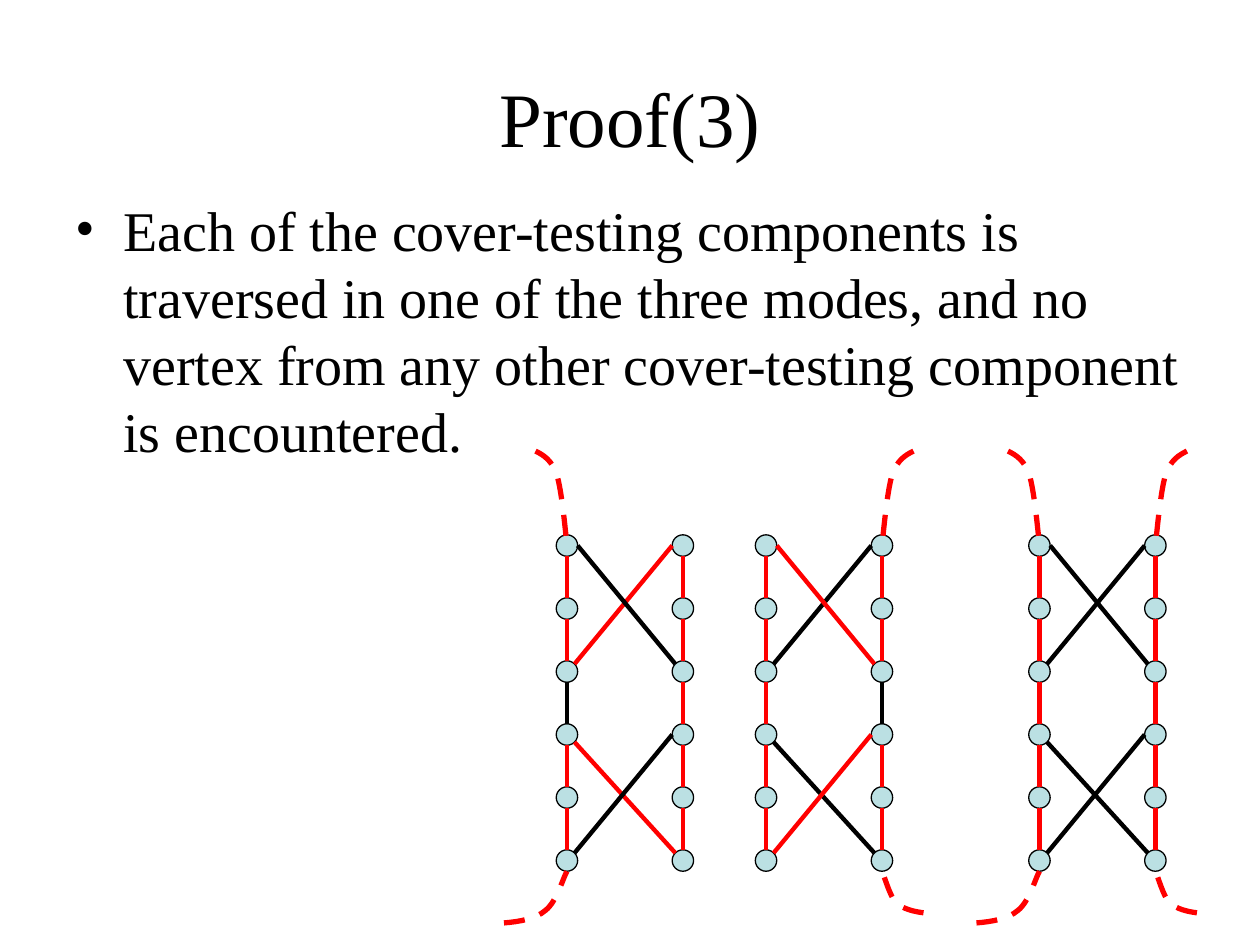
from dataclasses import dataclass

from lxml.etree import SubElement
from pptx import Presentation
from pptx.dml.color import RGBColor
from pptx.enum.dml import MSO_LINE
from pptx.enum.shapes import MSO_CONNECTOR, MSO_SHAPE
from pptx.enum.text import MSO_ANCHOR, PP_ALIGN
from pptx.oxml.ns import qn
from pptx.util import Inches, Pt


@dataclass(frozen=True)
class Theme:
    font: str = "Times New Roman"
    black: RGBColor = RGBColor(0x00, 0x00, 0x00)
    red: RGBColor = RGBColor(0xFF, 0x00, 0x00)
    node: RGBColor = RGBColor(0xBB, 0xE0, 0xE3)
    title_size: float = 44
    body_size: float = 32
    outline_width: float = 0.75
    edge_width: float = 2.5
    path_width: float = 3


# Graph grid, in inches
ROWS = [4.33 + 0.5 * row for row in range(6)]
COLUMN_GAP = 0.92
DIAMETER = 0.17
RADIUS = DIAMETER / 2
DIAGONAL = 0.06

# Bezier points, as offsets from the end at the node
TOP_TAIL = [(-0.25, -0.75), (-0.19, -0.72), (-0.12, -0.68), (-0.08, -0.56),
            (-0.04, -0.43), (-0.01, -0.09), (0, 0)]
LEFT_TAIL = [(-0.5, 0.41), (-0.38, 0.4), (-0.25, 0.38), (-0.17, 0.31),
             (-0.08, 0.24), (-0.03, 0.05), (0, 0)]
RIGHT_TAIL = [(0.33, 0.33), (0.25, 0.32), (0.17, 0.3), (0.11, 0.25),
              (0.06, 0.19), (0.02, 0.04), (0, 0)]


class SlideBuilder:
    def __init__(self, slide, theme):
        self.slide = slide
        self.theme = theme

    def text(self, box, wording, size, anchor, alignment):
        shape = self.slide.shapes.add_textbox(*map(Inches, box))
        frame = shape.text_frame
        frame.word_wrap = True
        frame.vertical_anchor = anchor
        paragraph = frame.paragraphs[0]
        paragraph.text = wording
        paragraph.alignment = alignment
        paragraph.font.name = self.theme.font
        paragraph.font.size = Pt(size)
        paragraph.font.color.rgb = self.theme.black
        return paragraph

    def bullet(self, paragraph, indent):
        paragraph.space_before = Pt(0.2 * self.theme.body_size)
        properties = paragraph._p.get_or_add_pPr()
        properties.set("marL", str(Inches(indent)))
        properties.set("indent", str(-Inches(indent)))
        font = properties.makeelement(qn("a:buFont"), {"typeface": self.theme.font})
        mark = properties.makeelement(qn("a:buChar"), {"char": "•"})
        properties.find(qn("a:spcBef")).addnext(font)
        font.addnext(mark)

    def node(self, x, y):
        shape = self.slide.shapes.add_shape(
            MSO_SHAPE.OVAL, Inches(x - RADIUS), Inches(y - RADIUS),
            Inches(DIAMETER), Inches(DIAMETER))
        shape.shadow.inherit = False
        shape.fill.solid()
        shape.fill.fore_color.rgb = self.theme.node
        shape.line.color.rgb = self.theme.black
        shape.line.width = Pt(self.theme.outline_width)

    def edge(self, start, end, on_path):
        connector = self.slide.shapes.add_connector(
            MSO_CONNECTOR.STRAIGHT, *map(Inches, (*start, *end)))
        connector.line.color.rgb = self.theme.red if on_path else self.theme.black
        connector.line.width = Pt(self.theme.edge_width)
        SubElement(connector._element.spPr, qn("a:effectLst"))

    def tail(self, x, y, offsets, mirror=1):
        points = [(Inches(x + mirror * dx), Inches(y + dy)) for dx, dy in offsets]
        builder = self.slide.shapes.build_freeform(*points[0])
        builder.add_line_segments(points[3::3], close=False)
        shape = builder.convert_to_shape()
        # Turn each straight segment into a cubic curve
        segments = list(shape._element.iter(qn("a:lnTo")))
        for number, segment in enumerate(segments):
            segment.tag = qn("a:cubicBezTo")
            segment.clear()
            for px, py in points[3 * number + 1:3 * number + 4]:
                SubElement(segment, qn("a:pt"), x=str(px - shape.left), y=str(py - shape.top))
        shape.shadow.inherit = False
        shape.fill.background()
        shape.line.color.rgb = self.theme.red
        shape.line.width = Pt(self.theme.path_width)
        shape.line.dash_style = MSO_LINE.DASH

    def component(self, left, black_middle, red_falling, red_rising):
        """Draw a cover-testing component; the sets hold the first rows of red diagonals."""
        right = left + COLUMN_GAP
        for side, x in (("left", left), ("right", right)):
            for y in ROWS:
                self.node(x, y)
            for row, (upper, lower) in enumerate(zip(ROWS, ROWS[1:])):
                on_path = row != 2 or side != black_middle
                self.edge((x, upper + RADIUS), (x, lower - RADIUS), on_path)
        for row in (0, 3):
            top, bottom = ROWS[row], ROWS[row + 2] - DIAGONAL
            # The upper falling edge leaves sideways, the lower one diagonally
            start = (left + RADIUS, top) if row == 0 else (left + DIAGONAL, top + DIAGONAL)
            rising = ((right - RADIUS, top), (left + DIAGONAL, bottom), row in red_rising)
            falling = (start, (right - DIAGONAL, bottom), row in red_falling)
            for edge in (rising, falling) if row == 0 else (falling, rising):
                self.edge(*edge)


def main():
    presentation = Presentation()
    presentation.slide_width = Inches(10)
    presentation.slide_height = Inches(7.5)
    slide = presentation.slides.add_slide(presentation.slide_layouts[6])
    theme = Theme()
    builder = SlideBuilder(slide, theme)

    # Title and statement
    builder.text((0.5, 0.3, 9, 1.25), "Proof(3)", theme.title_size,
                 MSO_ANCHOR.MIDDLE, PP_ALIGN.CENTER)
    statement = builder.text(
        (0.5, 1.5, 9, 5.2),
        "Each of the cover-testing components is traversed in one of the three modes, "
        "and no vertex from any other cover-testing component is encountered.",
        theme.body_size, MSO_ANCHOR.TOP, PP_ALIGN.LEFT)
    builder.bullet(statement, 0.38)

    # Three modes: left x, side with a black middle edge, red diagonals, tail sides
    modes = [
        (4.5, "left", {3}, {0}, ("left",)),
        (6.08, "right", {0}, {3}, ("right",)),
        (8.25, None, set(), set(), ("left", "right")),
    ]
    for left, black_middle, red_falling, red_rising, _ in modes:
        builder.component(left, black_middle, red_falling, red_rising)

    # Dashed path entering and leaving each component
    bottom = ROWS[-1] + RADIUS
    for left, *_, sides in modes:
        if "left" in sides:
            builder.tail(left, ROWS[0], TOP_TAIL)
            builder.tail(left, bottom, LEFT_TAIL)
        if "right" in sides:
            builder.tail(left + COLUMN_GAP, ROWS[0], TOP_TAIL, mirror=-1)
            builder.tail(left + COLUMN_GAP, bottom, RIGHT_TAIL)

    presentation.save("out.pptx")


if __name__ == "__main__":
    main()
